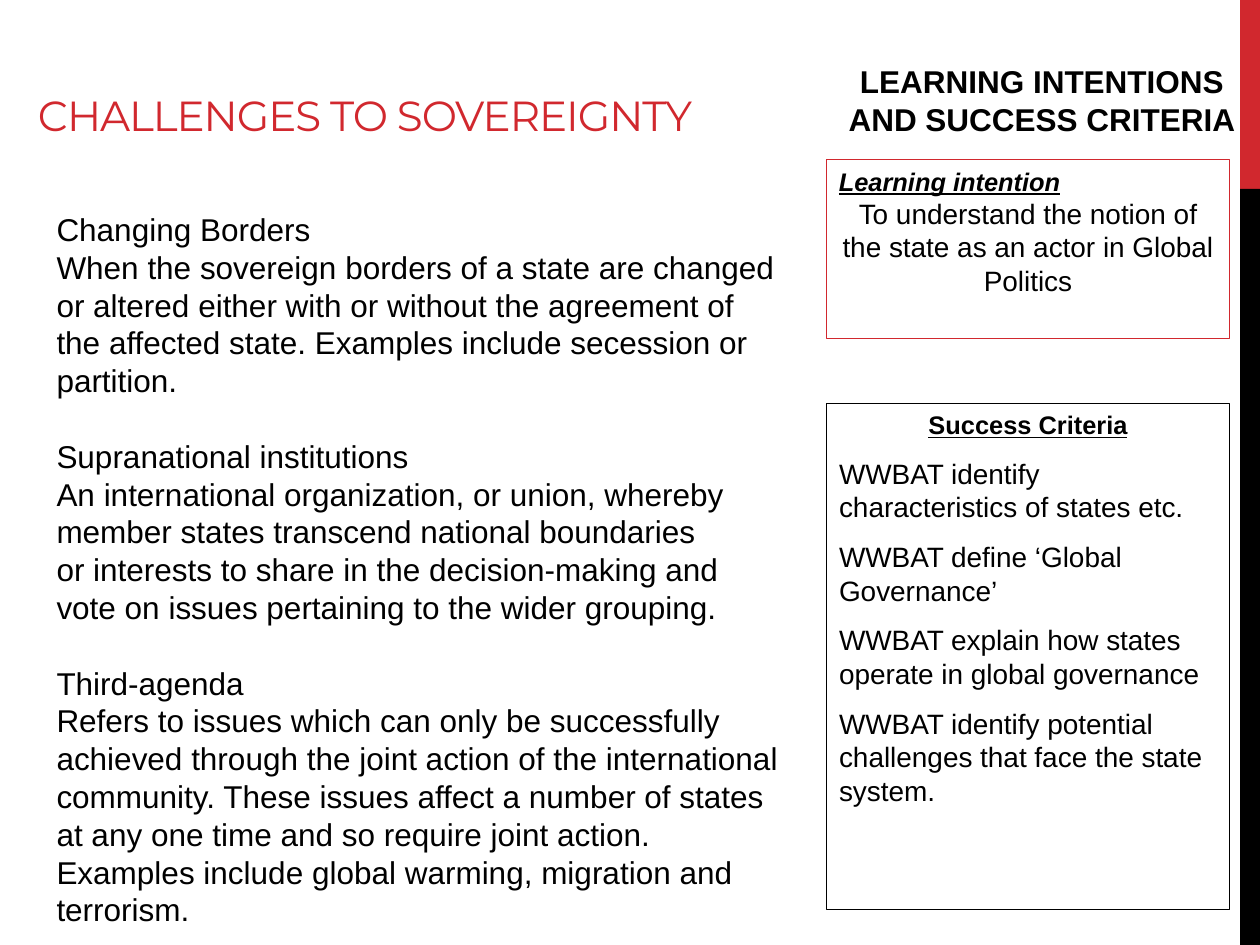
"""Build the slide on challenges to sovereignty."""
from lxml import etree
from pptx import Presentation
from pptx.dml.color import RGBColor
from pptx.enum.shapes import MSO_SHAPE
from pptx.enum.text import MSO_ANCHOR, MSO_AUTO_SIZE, PP_ALIGN
from pptx.oxml.ns import qn
from pptx.util import Cm, Pt

LEFT, CENTER = PP_ALIGN.LEFT, PP_ALIGN.CENTER
TOP, BOTTOM = MSO_ANCHOR.TOP, MSO_ANCHOR.BOTTOM
RECT = MSO_SHAPE.RECTANGLE
RED, BLACK = "D1282E", "000000"


def rgb(value):
    """Turn a hex string into a colour."""
    return RGBColor.from_string(value)


def write(sp, x, y, w, h, lines, anchor=TOP, color=BLACK, font="Arial"):
    """Place a shape and fill it with (text, size, align, style, before, after) lines."""
    sp.left, sp.top, sp.width, sp.height = Cm(x), Cm(y), Cm(w), Cm(h)
    tf = sp.text_frame
    tf.word_wrap = True
    tf.auto_size = MSO_AUTO_SIZE.NONE
    tf.vertical_anchor = anchor
    for i, (text, size, align, style, before, after) in enumerate(lines):
        p = tf.paragraphs[0] if i == 0 else tf.add_paragraph()
        p.alignment = align
        p.line_spacing = 1.0
        p.space_before, p.space_after = Pt(before), Pt(after)
        pPr = p._p.get_or_add_pPr()
        pPr.set("marL", "0")
        pPr.set("indent", "0")
        etree.SubElement(pPr, qn("a:buNone"))
        for j, part in enumerate(text.split("\n")):
            if j:
                p.add_line_break()
            r = p.add_run()
            r.text = part
            r.font.name = font
            r.font.size = Pt(size)
            r.font.color.rgb = rgb(color)
            r.font.bold = "b" in style
            r.font.italic = "i" in style
            r.font.underline = "u" in style


prs = Presentation()
prs.slide_width, prs.slide_height = Cm(25.4), Cm(19.05)
s = prs.slides.add_slide(prs.slide_layouts[1])

for y, h, color in [(0, 3.81, RED), (3.81, 15.24, BLACK)]:
    sp = s.shapes.add_shape(RECT, Cm(25), Cm(y), Cm(0.4), Cm(h))
    sp.shadow.inherit = False
    sp.fill.solid()
    sp.fill.fore_color.rgb = rgb(color)
    sp.line.fill.background()

title = s.shapes.title
write(title, 0.51, -0.86, 14, 3.81,
      [("CHALLENGES TO SOVEREIGNTY", 24, LEFT, "", 0, 0)],
      BOTTOM, RED, "Montserrat")
title.text_frame.paragraphs[0].runs[0].font._element.set("spc", "-60")

heading = s.shapes.add_textbox(0, 0, 0, 0)
write(heading, 16.66, 1.12, 8.69, 1.8,
      [("LEARNING INTENTIONS AND SUCCESS CRITERIA", 18, CENTER, "b", 0, 0)])

intention = s.shapes.add_shape(RECT, 0, 0, 0, 0)
intention.shadow.inherit = False
intention.fill.background()
write(intention, 16.66, 3.22, 8.13, 3.61, [
    ("Learning intention", 14.5, LEFT, "biu", 0, 0),
    ("To understand the notion of the state as an actor in Global Politics",
     16, CENTER, "", 0, 0),
])

criteria = s.placeholders[1]
goals = [
    "WWBAT identify characteristics of states etc.",
    "WWBAT define ‘Global Governance’",
    "WWBAT explain how states operate in global governance",
    "WWBAT identify potential challenges that face the state system.",
]
write(criteria, 16.66, 8.13, 8.13, 10.21,
      [("Success Criteria", 14.5, CENTER, "bu", 2.9, 6)]
      + [(goal, 16, LEFT, "", 3.2, 6) for goal in goals])

for sp, color in [(intention, RED), (criteria, BLACK)]:
    sp.line.color.rgb = rgb(color)
    sp.line.width = Pt(0.75)

challenges = [
    ("Changing Borders",
     "When the sovereign borders of a state are changed or altered either with or "
     "without the agreement of the affected state. Examples include secession or "
     "partition."),
    ("Supranational institutions",
     "An international organization, or union, whereby member states transcend "
     "national boundaries\nor interests to share in the decision-making and vote on "
     "issues pertaining to the wider grouping."),
    ("Third-agenda",
     "Refers to issues which can only be successfully achieved through the joint "
     "action of the international community. These issues affect a number of states "
     "at any one time and so require joint action. Examples include global warming, "
     "migration and terrorism."),
]
lines = []
for i, (name, meaning) in enumerate(challenges):
    lines.append((name, 18, LEFT, "", 21.6 if i else 0, 0))
    lines.append((meaning, 18, LEFT, "", 0, 0))
write(s.shapes.add_textbox(0, 0, 0, 0), 0.89, 4.11, 15.19, 16.41, lines)

prs.save("out.pptx")
